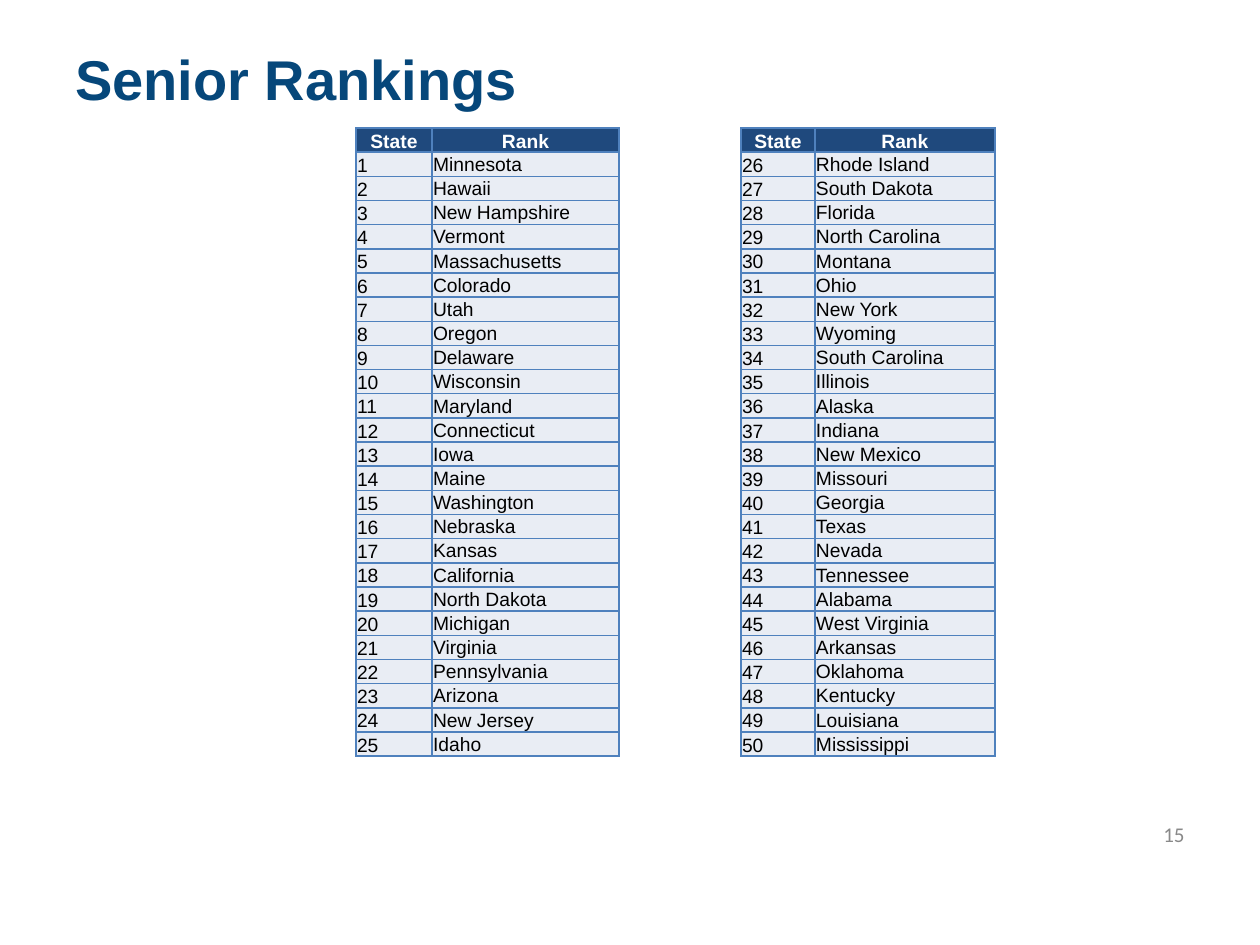
from lxml.etree import SubElement
from pptx import Presentation
from pptx.dml.color import RGBColor
from pptx.enum.text import MSO_ANCHOR as Anchor, PP_ALIGN as Align
from pptx.oxml.ns import qn
from pptx.util import Emu, Pt

SCALE = 914400 / 126
ROW_HEIGHT = 24
STATES = [
    "Minnesota", "Hawaii", "New Hampshire", "Vermont", "Massachusetts",
    "Colorado", "Utah", "Oregon", "Delaware", "Wisconsin",
    "Maryland", "Connecticut", "Iowa", "Maine", "Washington",
    "Nebraska", "Kansas", "California", "North Dakota", "Michigan",
    "Virginia", "Pennsylvania", "Arizona", "New Jersey", "Idaho",
    "Rhode Island", "South Dakota", "Florida", "North Carolina", "Montana",
    "Ohio", "New York", "Wyoming", "South Carolina", "Illinois",
    "Alaska", "Indiana", "New Mexico", "Missouri", "Georgia",
    "Texas", "Nevada", "Tennessee", "Alabama", "West Virginia",
    "Arkansas", "Oklahoma", "Kentucky", "Louisiana", "Mississippi",
]


def px(length):
    """Turn a length in px into EMU."""
    return Emu(round(length * SCALE))


def color(value):
    """Turn a hex string into a colour."""
    return RGBColor.from_string(value)


def style_paragraph(para, size, font, ink, bold=False, align=Align.LEFT):
    """Set the font and alignment of a paragraph."""
    para.alignment = align
    para.font.size = Pt(size)
    para.font.name = font
    para.font.bold = bold
    para.font.color.rgb = color(ink)


def add_text(page, text, left, top, width, height, anchor, **style):
    """Add a one-paragraph text box."""
    box = page.shapes.add_textbox(px(left), px(top), px(width), px(height))
    frame = box.text_frame
    frame.word_wrap = True
    frame.vertical_anchor = anchor
    frame.text = text
    style_paragraph(frame.paragraphs[0], **style)


def add_borders(cell, ink, width):
    """Draw a solid line on each side of a cell."""
    properties = cell._tc.get_or_add_tcPr()
    for side in ("a:lnL", "a:lnR", "a:lnT", "a:lnB"):
        line = SubElement(properties, qn(side), w=str(Pt(width)))
        fill = SubElement(line, qn("a:solidFill"))
        SubElement(fill, qn("a:srgbClr"), val=ink)


def fill_cell(cell, text, fill, ink, anchor, bold=False, align=Align.LEFT):
    """Write and style one table cell."""
    cell.text = text
    cell.vertical_anchor = anchor
    cell.margin_left = cell.margin_right = cell.margin_top = px(1)
    cell.margin_bottom = 0
    add_borders(cell, "4F81BD", 1)
    cell.fill.solid()
    cell.fill.fore_color.rgb = color(fill)
    style_paragraph(cell.text_frame.paragraphs[0], 11, "Arial", ink, bold, align)


def add_ranking(page, left, widths, first_rank, states):
    """Add a table of consecutively ranked states."""
    count = len(states) + 1
    frame = page.shapes.add_table(
        count, 2, px(left), px(128), px(sum(widths)), px(count * ROW_HEIGHT))
    table = frame.table
    for column, width in zip(table.columns, widths):
        column.width = px(width)
    for row in table.rows:
        row.height = px(ROW_HEIGHT)
    for index, heading in enumerate(("State", "Rank")):
        fill_cell(table.cell(0, index), heading, "1F497D", "FFFFFF",
                  Anchor.BOTTOM, True, Align.CENTER)
    for index, state in enumerate(states):
        rank = str(first_rank + index)
        fill_cell(table.cell(index + 1, 0), rank, "E9EDF4", "000000", Anchor.BOTTOM)
        fill_cell(table.cell(index + 1, 1), state, "E9EDF4", "000000", Anchor.MIDDLE)


def main():
    """Build the slide and save the deck."""
    deck = Presentation()
    deck.slide_width, deck.slide_height = px(1260), px(945)
    page = deck.slides.add_slide(deck.slide_layouts[6])
    add_text(page, "15", 903, 809, 294, 50, Anchor.MIDDLE,
             size=12, font="Calibri", ink="898989", align=Align.RIGHT)
    add_text(page, "Senior Rankings", 63, 38, 1134, 123, Anchor.TOP,
             size=32, font="Arial", ink="06477A", bold=True)
    half = len(STATES) // 2
    add_ranking(page, 356, (76, 187), 1, STATES[:half])
    add_ranking(page, 741, (74, 180), half + 1, STATES[half:])
    deck.save("out.pptx")


if __name__ == "__main__":
    main()
